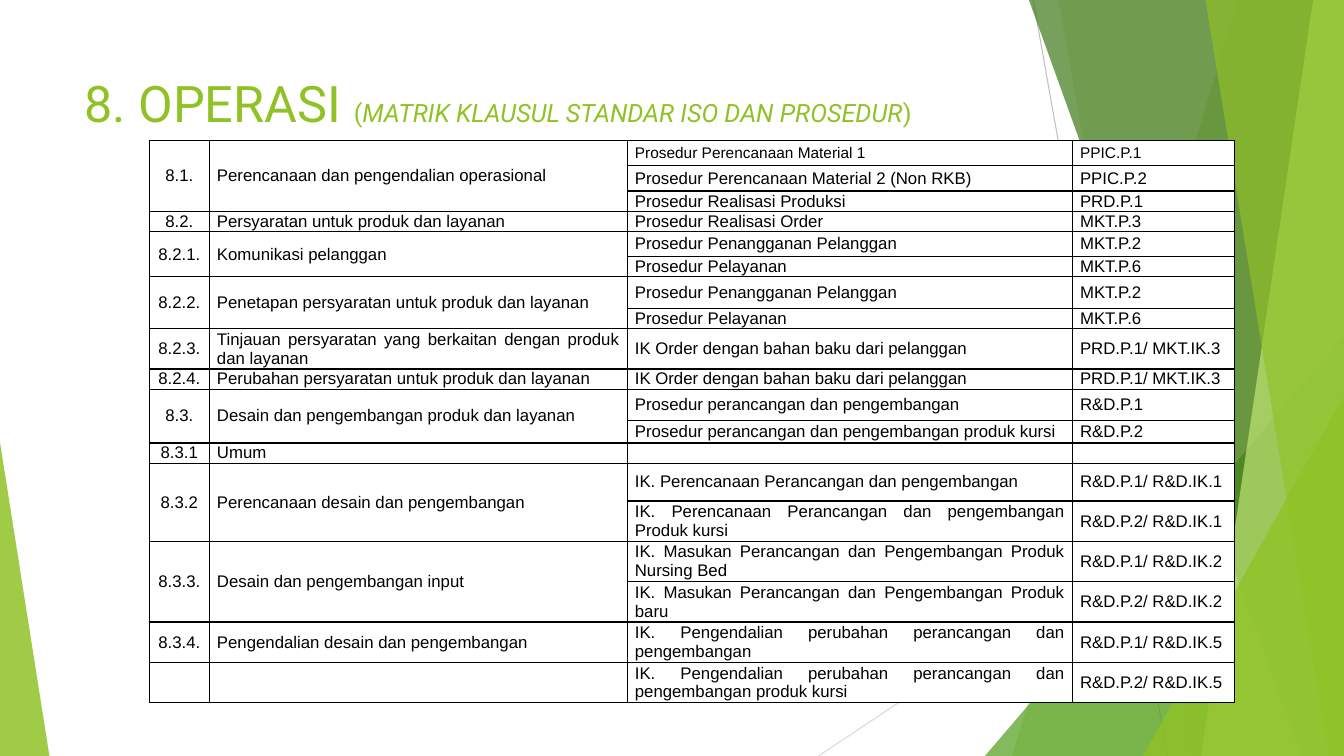
from lxml import etree
from pptx import Presentation
from pptx.dml.color import RGBColor
from pptx.enum.shapes import MSO_CONNECTOR, MSO_SHAPE
from pptx.enum.text import MSO_ANCHOR, PP_ALIGN
from pptx.oxml.ns import qn
from pptx.util import Pt

STRAIGHT = MSO_CONNECTOR.STRAIGHT
TRIANGLE = MSO_SHAPE.ISOSCELES_TRIANGLE
TOP, MIDDLE = MSO_ANCHOR.TOP, MSO_ANCHOR.MIDDLE
CENTER, JUSTIFY = PP_ALIGN.CENTER, PP_ALIGN.JUSTIFY

COLORS = {
    "lime": "90C226", "green": "54A021", "forest": "3F7819", "pale": "C0E474",
    "gray": "BFBFBF", "silver": "D9D9D9", "black": "000000", "white": "FFFFFF",
}
WIDTH, HEIGHT = 960, 540
CELL_INDENT = 5.4

COLUMN_WIDTHS = [43, 298.5, 318, 116]
ROW_HEIGHTS = [18, 18, 13.5, 13.5, 18, 13.5, 22.5, 13.5, 27, 13.5,
               22.5, 16, 13.5, 27, 27, 27, 27, 27, 27]

# Clause number, clause title, procedures with their codes
CLAUSES = [
    ("8.1.", "Perencanaan dan pengendalian operasional", [
        ("Prosedur Perencanaan Material 1", "PPIC.P.1"),
        ("Prosedur Perencanaan Material 2 (Non RKB)", "PPIC.P.2"),
        ("Prosedur Realisasi Produksi", "PRD.P.1")]),
    ("8.2.", "Persyaratan untuk produk dan layanan", [
        ("Prosedur Realisasi Order", "MKT.P.3")]),
    ("8.2.1.", "Komunikasi pelanggan", [
        ("Prosedur Penangganan Pelanggan", "MKT.P.2"),
        ("Prosedur Pelayanan", "MKT.P.6")]),
    ("8.2.2.", "Penetapan persyaratan untuk produk dan layanan", [
        ("Prosedur Penangganan Pelanggan", "MKT.P.2"),
        ("Prosedur Pelayanan", "MKT.P.6")]),
    ("8.2.3.", "Tinjauan persyaratan yang berkaitan dengan produk dan layanan", [
        ("IK Order dengan bahan baku dari pelanggan", "PRD.P.1/ MKT.IK.3")]),
    ("8.2.4.", "Perubahan persyaratan untuk produk dan layanan", [
        ("IK Order dengan bahan baku dari pelanggan", "PRD.P.1/ MKT.IK.3")]),
    ("8.3.", "Desain dan pengembangan produk dan layanan", [
        ("Prosedur perancangan dan pengembangan", "R&D.P.1"),
        ("Prosedur perancangan dan pengembangan produk kursi", "R&D.P.2")]),
    ("8.3.1", "Umum", [("", "")]),
    ("8.3.2", "Perencanaan desain dan pengembangan", [
        ("IK. Perencanaan Perancangan dan pengembangan", "R&D.P.1/ R&D.IK.1"),
        ("IK. Perencanaan Perancangan dan pengembangan Produk kursi",
         "R&D.P.2/ R&D.IK.1")]),
    ("8.3.3.", "Desain dan pengembangan input", [
        ("IK. Masukan Perancangan dan Pengembangan Produk Nursing Bed",
         "R&D.P.1/ R&D.IK.2"),
        ("IK. Masukan Perancangan dan Pengembangan Produk baru",
         "R&D.P.2/ R&D.IK.2")]),
    ("8.3.4.", "Pengendalian desain dan pengembangan", [
        ("IK. Pengendalian perubahan perancangan dan pengembangan",
         "R&D.P.1/ R&D.IK.5")]),
    ("", "", [
        ("IK. Pengendalian perubahan perancangan dan pengembangan produk kursi",
         "R&D.P.2/ R&D.IK.5")]),
]


def rgb(name):
    return RGBColor.from_string(COLORS[name])


def paint(shape, color, opacity):
    shape.shadow.inherit = False
    shape.fill.solid()
    shape.fill.fore_color.rgb = rgb(color)
    shape.line.fill.background()
    solid = shape.element.spPr.find(qn("a:solidFill"))
    etree.SubElement(solid[0], qn("a:alpha"), val=str(opacity * 1000))


def add_band(page, top_left, bottom_left, color, opacity):
    """Full-height band reaching from a slanted left side to the right edge."""
    builder = page.shapes.build_freeform(Pt(top_left), 0)
    corners = [(WIDTH, 0), (WIDTH, HEIGHT), (bottom_left, HEIGHT)]
    builder.add_line_segments([(Pt(x), Pt(y)) for x, y in corners], close=True)
    paint(builder.convert_to_shape(), color, opacity)


def add_corner(page, left, top, width, apex, color, opacity):
    """Right-angled triangle standing on the bottom edge."""
    corner = page.shapes.add_shape(TRIANGLE, Pt(left), Pt(top),
                                   Pt(width), Pt(HEIGHT - top))
    corner.adjustments[0] = apex
    paint(corner, color, opacity)


def add_hairline(page, x1, y1, x2, y2, color):
    line = page.shapes.add_connector(STRAIGHT, Pt(x1), Pt(y1), Pt(x2), Pt(y2))
    line.line.color.rgb = rgb(color)
    line.line.width = Pt(0.75)
    etree.SubElement(line.element.spPr, qn("a:effectLst"))


def add_title(page, spans):
    box = page.shapes.add_textbox(Pt(53.3), Pt(48.2), Pt(676.8), Pt(60.5))
    frame = box.text_frame
    frame.word_wrap = True
    frame.vertical_anchor = TOP
    para = frame.paragraphs[0]
    for text, size, italic in spans:
        span = para.add_run()
        span.text = text
        span.font.name = "Roboto"
        span.font.size = Pt(size)
        span.font.italic = italic
        span.font.color.rgb = rgb("lime")


def add_borders(cell):
    properties = cell._tc.get_or_add_tcPr()
    for index, side in enumerate(("lnL", "lnR", "lnT", "lnB")):
        edge = etree.Element(qn(f"a:{side}"), w=str(Pt(1)))
        solid = etree.SubElement(edge, qn("a:solidFill"))
        etree.SubElement(solid, qn("a:srgbClr"), val=COLORS["black"])
        properties.insert(index, edge)


def style_cell(cell):
    cell.fill.solid()
    cell.fill.fore_color.rgb = rgb("white")
    cell.margin_left = cell.margin_right = 0
    cell.margin_top = cell.margin_bottom = 0
    cell.vertical_anchor = MIDDLE
    add_borders(cell)


def write_cell(cell, text, align, size):
    para = cell.text_frame.paragraphs[0]
    para.text = text
    para.alignment = align
    if align == JUSTIFY:
        for margin in ("marL", "marR"):
            para._p.get_or_add_pPr().set(margin, str(Pt(CELL_INDENT)))
    for span in para.runs:
        span.font.name = "Arial"
        span.font.size = Pt(size)
        span.font.color.rgb = rgb("black")
    if not text:
        # Keeps an empty cell from stretching its row
        etree.SubElement(para._p, qn("a:endParaRPr"), sz=str(size * 100))


def add_clause_table(page):
    frame = page.shapes.add_table(len(ROW_HEIGHTS), len(COLUMN_WIDTHS),
                                  Pt(106.6), Pt(100.5),
                                  Pt(sum(COLUMN_WIDTHS)), Pt(sum(ROW_HEIGHTS)))
    table = frame.table
    table.first_row = table.horz_banding = False
    for column, width in zip(table.columns, COLUMN_WIDTHS):
        column.width = Pt(width)
    for row, height in zip(table.rows, ROW_HEIGHTS):
        row.height = Pt(height)
    for cell in table.iter_cells():
        style_cell(cell)
        write_cell(cell, "", JUSTIFY, 12) if cell.is_spanned else None

    row = 0
    for number, title, procedures in CLAUSES:
        last = row + len(procedures) - 1
        for column, text, align in ((0, number, CENTER), (1, title, JUSTIFY)):
            write_cell(table.cell(row, column), text, align, 12)
            if last > row:
                for below in range(row + 1, last + 1):
                    write_cell(table.cell(below, column), "", align, 12)
                table.cell(row, column).merge(table.cell(last, column))
        for procedure, code in procedures:
            size = 11 if row == 0 else 12
            write_cell(table.cell(row, 2), procedure, JUSTIFY, size)
            write_cell(table.cell(row, 3), code, JUSTIFY, size)
            row += 1


def main():
    deck = Presentation()
    deck.slide_width, deck.slide_height = Pt(WIDTH), Pt(HEIGHT)
    page = deck.slides.add_slide(deck.slide_layouts[6])

    # Green facets around the edges
    add_hairline(page, 738, 0, 834, HEIGHT, "gray")
    add_hairline(page, WIDTH, 290, 584.6, HEIGHT, "silver")
    add_band(page, 884, 723, "lime", 30)
    add_band(page, 756, 852, "lime", 20)
    add_corner(page, 703.5, 240, 256.5, 1, "green", 72)
    add_band(page, 735, 929.5, "forest", 70)
    add_band(page, 938, 858, "pale", 70)
    add_band(page, 861, 949, "lime", 65)
    add_corner(page, 816.5, 283, 143.5, 1, "lime", 80)
    add_corner(page, 0, 316, 35.3, 0, "lime", 85)

    # Title and matrix
    add_title(page, [
        ("8. OPERASI ", 36, False),
        ("(", 18, False),
        ("MATRIK KLAUSUL STANDAR ISO DAN PROSEDUR", 18, True),
        (")", 18, False),
    ])
    add_clause_table(page)
    deck.save("out.pptx")


if __name__ == "__main__":
    main()
